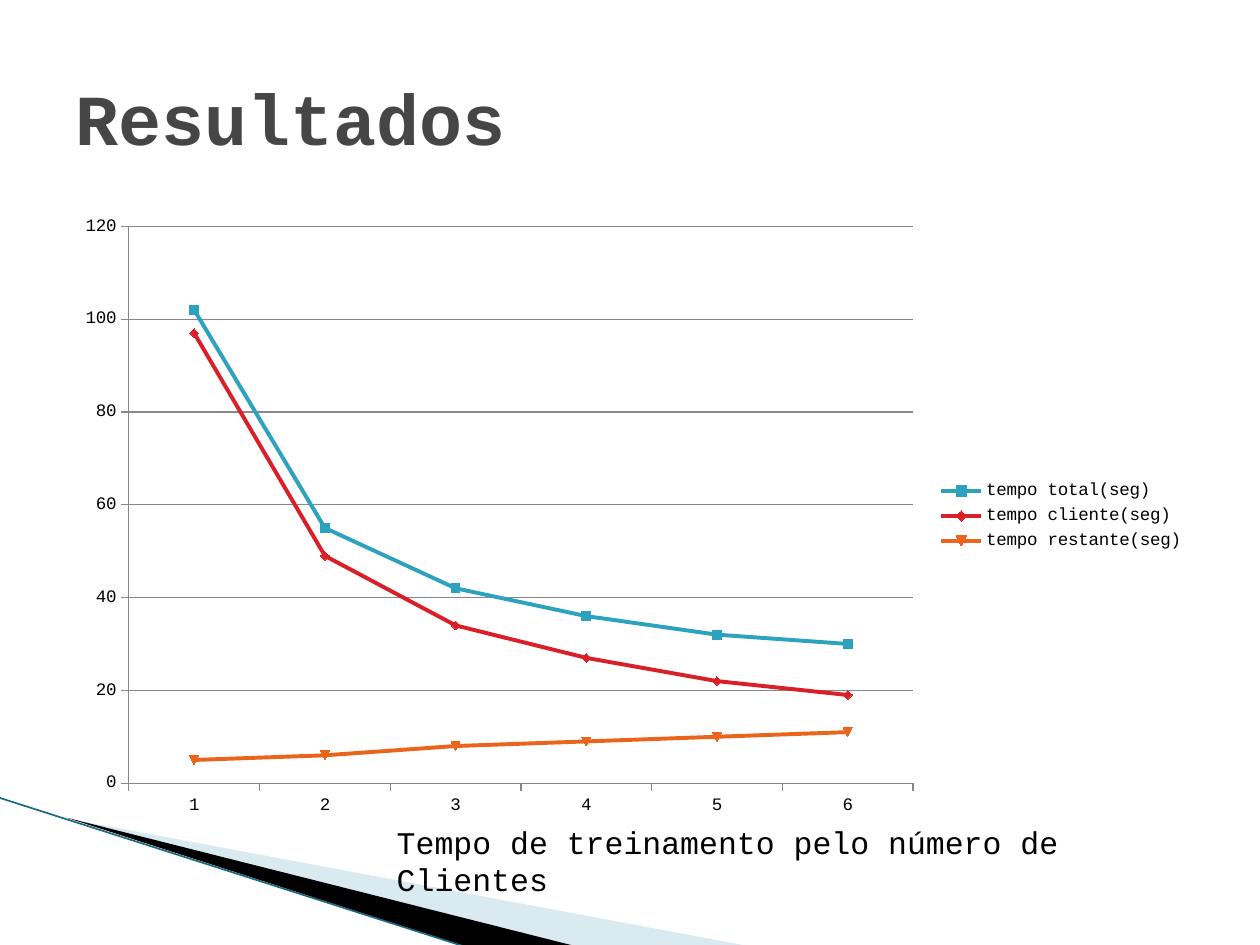
from pptx import Presentation
from pptx.chart.data import CategoryChartData
from pptx.dml.color import RGBColor
from pptx.enum.chart import XL_CHART_TYPE, XL_LEGEND_POSITION, XL_TICK_MARK
from pptx.enum.shapes import MSO_CONNECTOR
from pptx.enum.text import MSO_ANCHOR, PP_ALIGN
from pptx.oxml.ns import qn
from pptx.util import Inches, Pt
from lxml import etree

FONT = "Courier New"
GREY = "878787"


def color(hex_string):
    return RGBColor.from_string(hex_string)


def style_font(font, size, hex_string, bold=False):
    font.name = FONT
    font.size = Pt(size)
    font.bold = bold
    font.color.rgb = color(hex_string)


def style_line(line, hex_string, width):
    line.color.rgb = color(hex_string)
    line.width = Pt(width)


def add_wedge(slide, left, top, points, fill, opacity=100):
    """Filled outline; points are inches from the wedge's left top corner."""
    corners = [(Inches(left + x), Inches(top + y)) for x, y in points]
    builder = slide.shapes.build_freeform(*corners[0])
    builder.add_line_segments(corners[1:], close=True)
    wedge = builder.convert_to_shape()
    wedge.shadow.inherit = False
    wedge.fill.solid()
    wedge.fill.fore_color.rgb = color(fill)
    wedge.line.fill.background()
    if opacity < 100:
        solid_color = wedge.fill._xPr.find(qn("a:solidFill"))[0]
        etree.SubElement(solid_color, qn("a:alpha"), val=str(opacity * 1000))


def add_corner_decoration(slide, left, top):
    # Pale and black wedges
    add_wedge(slide, left + 0.55, top + 0.17,
              [(0, 0), (5.4, 1.01), (4.01, 1.01)], "A0CBDC", 40)
    add_wedge(slide, left + 0.53, top + 0.16,
              [(0, 0), (4.04, 1.02), (3.19, 1.03)], "000000")
    # Teal edge
    edge = slide.shapes.add_connector(
        MSO_CONNECTOR.STRAIGHT, Inches(left - 0.01), Inches(top),
        Inches(left + 3.71), Inches(top + 1.19))
    style_line(edge.line, "1A6B80", 0.95)
    etree.SubElement(edge._element.spPr, qn("a:effectLst"))


def add_heading(slide, left, top, width, height):
    heading = slide.shapes.title
    heading.left, heading.top = Inches(left), Inches(top)
    heading.width, heading.height = Inches(width), Inches(height)
    heading.text_frame.text = "Resultados"
    heading.text_frame.vertical_anchor = MSO_ANCHOR.MIDDLE
    paragraph = heading.text_frame.paragraphs[0]
    paragraph.alignment = PP_ALIGN.LEFT
    style_font(paragraph.font, 41, "464646", bold=True)


def add_times_chart(slide, left, top, width, height):
    times = [
        ("tempo total(seg)", (102, 55, 42, 36, 32, 30), "2DA2BF"),
        ("tempo cliente(seg)", (97, 49, 34, 27, 22, 19), "DA1F28"),
        ("tempo restante(seg)", (5, 6, 8, 9, 10, 11), "EB641B"),
    ]
    data = CategoryChartData()
    data.categories = [str(clients) for clients in range(1, 7)]
    for name, values, _ in times:
        data.add_series(name, values)
    chart = slide.shapes.add_chart(
        XL_CHART_TYPE.LINE_MARKERS, Inches(left), Inches(top),
        Inches(width), Inches(height), data).chart
    chart.has_title = False
    style_font(chart.font, 10, "000000")

    # Legend
    chart.has_legend = True
    chart.legend.position = XL_LEGEND_POSITION.RIGHT
    chart.legend.include_in_layout = False

    # Axes
    for axis in (chart.category_axis, chart.value_axis):
        axis.major_tick_mark = XL_TICK_MARK.OUTSIDE
        axis.minor_tick_mark = XL_TICK_MARK.NONE
        style_line(axis.format.line, GREY, 0.75)
    seconds = chart.value_axis
    seconds.minimum_scale, seconds.maximum_scale = 0, 120
    seconds.major_unit = 20
    seconds.has_major_gridlines = True
    style_line(seconds.major_gridlines.format.line, GREY, 0.75)

    # Series
    chart.plots[0].vary_by_categories = False
    for series, (_, _, hex_string) in zip(chart.plots[0].series, times):
        series.smooth = False
        style_line(series.format.line, hex_string, 2.25)
        series.marker.format.fill.solid()
        series.marker.format.fill.fore_color.rgb = color(hex_string)
        series.marker.format.line.color.rgb = color(hex_string)


def add_caption(slide, left, top, width, height):
    caption = slide.shapes.add_textbox(
        Inches(left), Inches(top), Inches(width), Inches(height))
    caption.text_frame.word_wrap = True
    caption.text_frame.text = "Tempo de treinamento pelo número de Clientes"
    style_font(caption.text_frame.paragraphs[0].font, 18, "000000")


def main():
    presentation = Presentation()
    presentation.slide_width = Inches(10)
    presentation.slide_height = Inches(7.5)
    slide = presentation.slides.add_slide(presentation.slide_layouts[5])
    add_corner_decoration(slide, 0, 6.33)
    add_heading(slide, 0.5, 0.3, 9, 1.25)
    add_times_chart(slide, 0.5, 1.62, 9, 4.95)
    add_caption(slide, 3.05, 6.48, 6.08, 0.4)
    presentation.save("out.pptx")


if __name__ == "__main__":
    main()
